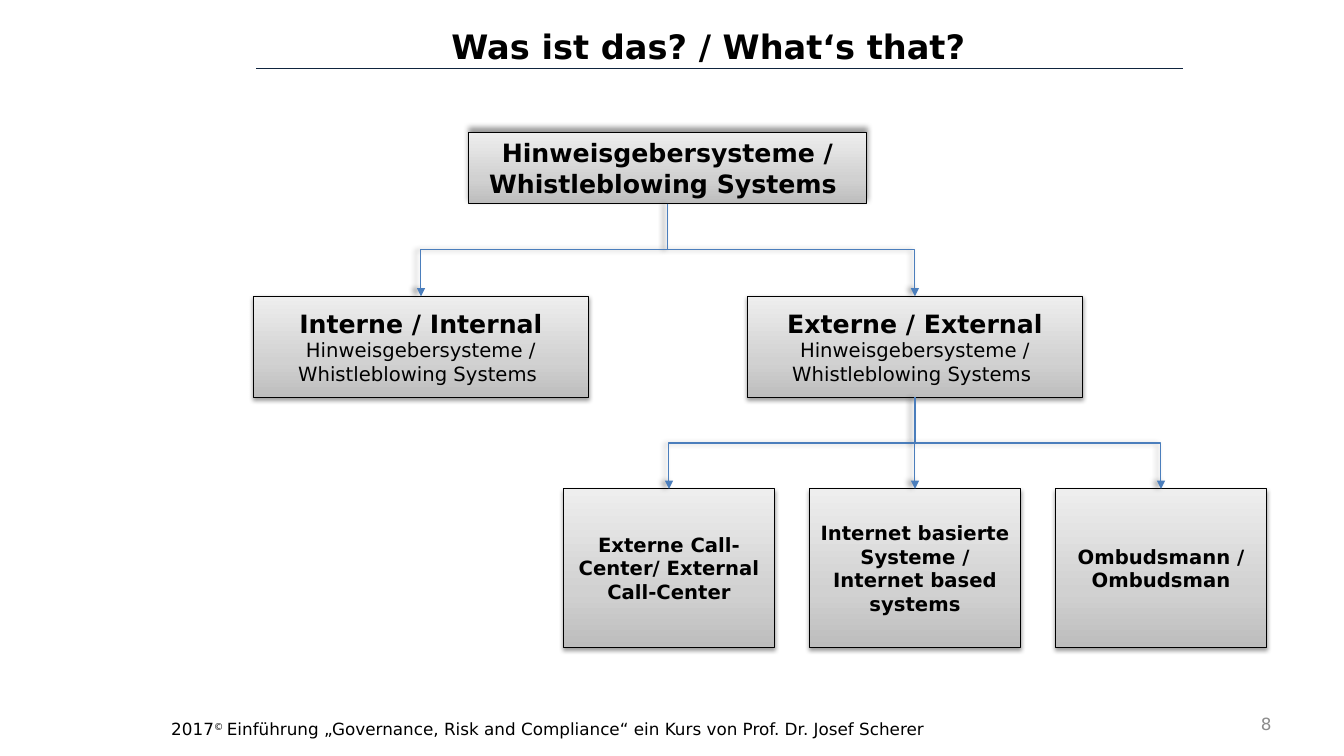
from copy import deepcopy
from dataclasses import dataclass

from pptx import Presentation
from pptx import util as u
from pptx.dml.color import RGBColor
from pptx.enum import shapes, text
from pptx.oxml import parse_xml
from pptx.oxml.ns import nsdecls, qn

PX = 9144  # 100 px to the inch
FONT = "DejaVu Sans"
BLACK, ARROW_BLUE = "000000", "4B7EBC"
GRADIENT = [(0, "BDBDBD"), (0.35, "D1D1D1"), (1, "EEEEEE")]


@dataclass(frozen=True)
class Shadow:
    alpha: int
    blur: float
    distance: float
    angle: int


@dataclass(frozen=True)
class Span:
    words: str
    size: int
    bold: bool = False
    color: str = BLACK
    baseline: int = 0


@dataclass(frozen=True)
class Node:
    left: int
    top: int
    width: int
    height: int
    lines: tuple[Span, ...]
    shadow: Shadow = Shadow(38, 3.1, 1.6, 90)


ROOT_SHADOW = Shadow(40, 4, 3, 270)
ARROW_SHADOW = Shadow(40, 4, 3, 180)


def px(length: int) -> int:
    return length * PX


def rgb(color: str) -> RGBColor:
    return RGBColor.from_string(color)


def set_effects(shape, shadow: Shadow | None = None) -> None:
    """Call after fill and line, since effects come last in the properties."""
    properties = shape._element.spPr
    for old in properties.findall(qn("a:effectLst")):
        properties.remove(old)
    inner = ""
    if shadow:
        inner = (
            f'<a:outerShdw blurRad="{u.Pt(shadow.blur)}" dist="{u.Pt(shadow.distance)}" '
            f'dir="{shadow.angle * 60000}" rotWithShape="0"><a:srgbClr val="{BLACK}">'
            f'<a:alpha val="{shadow.alpha * 1000}"/></a:srgbClr></a:outerShdw>'
        )
    properties.append(parse_xml(f'<a:effectLst {nsdecls("a")}>{inner}</a:effectLst>'))


def add_span(para, item: Span) -> None:
    span = para.add_run()
    span.text = item.words
    span.font.name = FONT
    span.font.size = u.Pt(item.size)
    span.font.bold = item.bold
    span.font.color.rgb = rgb(item.color)
    if item.baseline:
        span._r.get_or_add_rPr().set("baseline", str(item.baseline * 1000))


def fill_text(box, paragraphs, align, anchor) -> None:
    frame = box.text_frame
    frame.word_wrap = True
    frame.vertical_anchor = anchor
    frame.margin_left = frame.margin_right = px(10)
    frame.margin_top = frame.margin_bottom = px(5)
    for index, spans in enumerate(paragraphs):
        para = frame.add_paragraph() if index else frame.paragraphs[0]
        para.alignment = align
        for item in spans:
            add_span(para, item)


def add_text(page, left: int, top: int, width: int, height: int, spans, align, anchor) -> None:
    box = page.shapes.add_textbox(px(left), px(top), px(width), px(height))
    fill_text(box, [spans], align, anchor)


def add_node(page, node: Node):
    box = page.shapes.add_shape(
        shapes.MSO_SHAPE.FLOWCHART_PROCESS,
        px(node.left), px(node.top), px(node.width), px(node.height),
    )
    box.fill.gradient()
    box.fill.gradient_angle = 90
    stop_list = box._element.spPr.find(".//" + qn("a:gsLst"))
    stop_list.append(deepcopy(stop_list[0]))
    for stop, (position, color) in zip(box.fill.gradient_stops, GRADIENT):
        stop.position = position
        stop.color.rgb = rgb(color)
    box.line.color.rgb = rgb(BLACK)
    box.line.width = u.Pt(0.75)
    set_effects(box, node.shadow)
    fill_text(box, [[line] for line in node.lines],
              text.PP_ALIGN.CENTER, text.MSO_ANCHOR.MIDDLE)
    return box


def style_line(line, color: str, shadow: Shadow | None = None, arrow: bool = False) -> None:
    line.line.color.rgb = rgb(color)
    line.line.width = u.Pt(0.75)
    if arrow:
        outline = line._element.spPr.find(qn("a:ln"))
        outline.append(parse_xml(f'<a:tailEnd {nsdecls("a")} type="triangle"/>'))
    set_effects(line, shadow)


def centre(box) -> int:
    return box.left + box.width // 2


def add_branch(page, parent, child) -> None:
    """Elbow that leaves the parent downwards: a turned horizontal elbow."""
    start, end = centre(parent), centre(child)
    upper, lower = parent.top + parent.height, child.top
    drop, reach = lower - upper, abs(end - start)
    left = (start + end - drop) // 2
    top = (upper + lower - reach) // 2
    branch = page.shapes.add_connector(
        shapes.MSO_CONNECTOR.ELBOW, left, top, left + drop, top + reach)
    frame = branch._element.spPr.find(qn("a:xfrm"))
    to_right = end > start
    frame.set("rot", str((270 if to_right else 90) * 60000))
    if to_right:
        frame.set("flipH", "1")
    style_line(branch, ARROW_BLUE, ARROW_SHADOW, arrow=True)


def main() -> None:
    deck = Presentation()
    deck.slide_width, deck.slide_height = px(1333), px(750)
    page = deck.slides.add_slide(deck.slide_layouts[5])

    # Title and rule
    title = page.shapes.title
    title.left, title.top, title.width, title.height = map(px, (423, 21, 559, 50))
    fill_text(title, [[Span("Was ist das? / What‘s that?", 24, True)]],
              text.PP_ALIGN.CENTER, text.MSO_ANCHOR.TOP)
    rule = page.shapes.add_connector(
        shapes.MSO_CONNECTOR.STRAIGHT, px(254), px(68), px(1173), px(68))
    style_line(rule, "0F243E")

    # Footer and page number
    add_text(page, 160, 708, 801, 30, [
        Span("2017", 12),
        Span("© ", 12, baseline=30),
        Span("Einführung „Governance, Risk and Compliance“ ein Kurs von Prof. Dr. Josef Scherer", 12),
    ], text.PP_ALIGN.LEFT, text.MSO_ANCHOR.TOP)
    add_text(page, 1129, 698, 142, 40, [Span("8", 12, color="8C8C8C")],
             text.PP_ALIGN.RIGHT, text.MSO_ANCHOR.MIDDLE)

    # Boxes of the tree
    systems = "Hinweisgebersysteme / Whistleblowing Systems "
    root = add_node(page, Node(465, 131, 394, 71, (Span(systems, 18, True),), ROOT_SHADOW))
    internal, external = [
        add_node(page, Node(251 + 490 * column, 294, 333, 100,
                            (Span(heading, 18, True), Span(systems, 14))))
        for column, heading in enumerate(("Interne / Internal", "Externe / External"))
    ]
    call_center, internet, ombudsman = [
        add_node(page, Node(559 + 244 * column, 485, 209, 157, (Span(label, 14, True),)))
        for column, label in enumerate((
            "Externe Call-Center/ External Call-Center",
            "Internet basierte Systeme / Internet based systems",
            "Ombudsmann / Ombudsman",
        ))
    ]

    # Arrows
    for parent, child in ((root, external), (root, internal),
                          (external, ombudsman), (external, call_center)):
        add_branch(page, parent, child)
    fork = (external.top + external.height + internet.top) // 2
    stem = page.shapes.add_connector(
        shapes.MSO_CONNECTOR.STRAIGHT, centre(external), fork, centre(internet), internet.top)
    stem.end_connect(internet, 0)
    style_line(stem, ARROW_BLUE, ARROW_SHADOW, arrow=True)

    deck.save("out.pptx")


if __name__ == "__main__":
    main()
